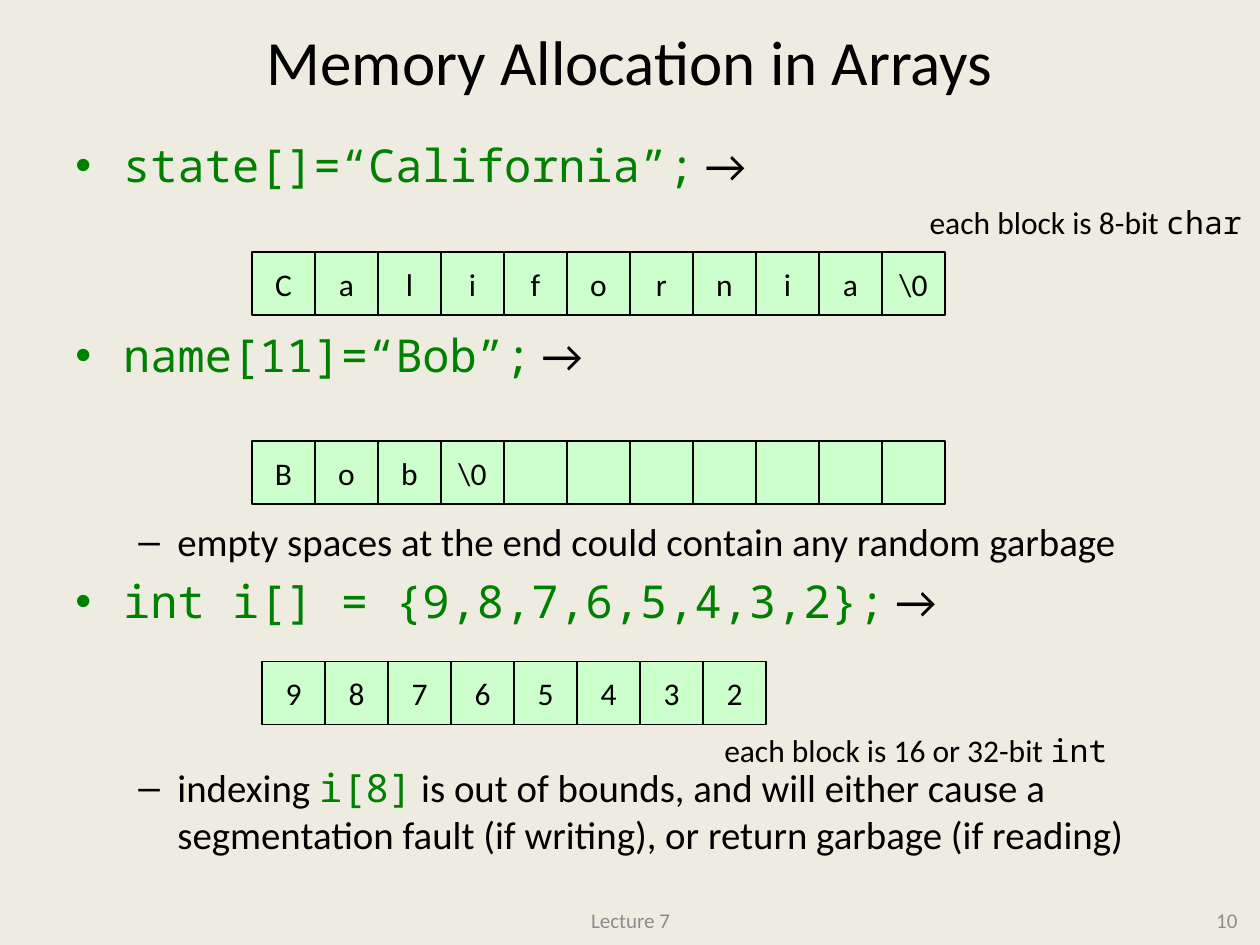
import dataclasses

import pptx
import pptx.dml.color
import pptx.enum.shapes
import pptx.enum.text
import pptx.oxml
import pptx.oxml.ns
import pptx.util

Inches = pptx.util.Inches
Pt = pptx.util.Pt
Align = pptx.enum.text.PP_ALIGN
Anchor = pptx.enum.text.MSO_ANCHOR


@dataclasses.dataclass(frozen=True)
class Theme:
    paper: str = "EEECE1"
    ink: str = "000000"
    muted: str = "8C8C8C"
    code: str = "008000"
    block: str = "CCFFCC"
    text_font: str = "Calibri"
    code_font: str = "Noto Sans Mono"
    title: float = 36
    bullet: float = 25.9
    sub_bullet: float = 22.2
    label: float = 18
    footer: float = 12


def rgb(value):
    return pptx.dml.color.RGBColor.from_string(value)


class Deck:
    """Holds the theme and the current slide."""

    def __init__(self, theme):
        self.theme = theme
        self.prs = pptx.Presentation()
        self.prs.slide_width, self.prs.slide_height = Inches(10), Inches(7.5)
        self.s = self.prs.slides.add_slide(self.prs.slide_layouts[6])
        fill = self.s.background.fill
        fill.solid()
        fill.fore_color.rgb = rgb(theme.paper)

    def run(self, p, text, size, color=None, font=None):
        r = p.add_run()
        r.text = text
        style = {"size": Pt(size), "name": font or self.theme.text_font}
        for name, value in style.items():
            setattr(r.font, name, value)
        r.font.color.rgb = rgb(color or self.theme.ink)

    def box(self, left, top, width, height, **frame):
        sp = self.s.shapes.add_textbox(*map(Inches, (left, top, width, height)))
        for name, value in {"word_wrap": True, **frame}.items():
            setattr(sp.text_frame, name, value)
        return sp.text_frame

    def line(self, at, text, size, align, color=None):
        p = self.box(*at, vertical_anchor=Anchor.MIDDLE).paragraphs[0]
        p.alignment = align
        self.run(p, text, size, color)

    def label(self, at, text, code):
        p = self.box(*at, word_wrap=False).paragraphs[0]
        self.run(p, text, self.theme.label)
        self.run(p, code, self.theme.label, font=self.theme.code_font)

    def bullets(self, at, items):
        """Each item is (level, space before, [(text, is code), ...])."""
        t = self.theme
        levels = [("•", 0.38, 0.38, t.bullet), ("–", 0.81, 0.31, t.sub_bullet)]
        tf = self.box(*at)
        for i, (level, space, runs) in enumerate(items):
            mark, margin, hang, size = levels[level]
            p = tf.add_paragraph() if i else tf.paragraphs[0]
            p.level = level
            p.space_before = Pt(space)
            pPr = p._p.get_or_add_pPr()
            pPr.set("marL", str(Inches(margin)))
            pPr.set("indent", str(-Inches(hang)))
            for tag, key, value in (("buFont", "typeface", "Arial"), ("buChar", "char", mark)):
                bu = pptx.oxml.parse_xml(f"<a:{tag} {pptx.oxml.ns.nsdecls('a')}/>")
                bu.set(key, value)
                pPr.append(bu)
            for text, is_code in runs:
                style = (t.code, t.code_font) if is_code else ()
                self.run(p, text, size, *style)

    def memory(self, left, top, values, side=0.5):
        """Draws a row of adjoining memory blocks as one group."""
        group = self.s.shapes.add_group_shape()
        for i, value in enumerate(values):
            sp = group.shapes.add_shape(
                pptx.enum.shapes.MSO_SHAPE.RECTANGLE,
                *map(Inches, (left + i * side, top, side, side)))
            sp.shadow.inherit = False
            sp.fill.solid()
            sp.fill.fore_color.rgb = rgb(self.theme.block)
            sp.line.color.rgb = rgb(self.theme.ink)
            sp.line.width = Pt(0.75)
            tf = sp.text_frame
            for name, v in {"word_wrap": False, "vertical_anchor": Anchor.MIDDLE}.items():
                setattr(tf, name, v)
            p = tf.paragraphs[0]
            p.alignment = Align.CENTER
            if value:
                self.run(p, value, self.theme.label)


def main():
    t = Theme()
    deck = Deck(t)
    deck.line((3.42, 7.1, 3.17, 0.4), "Lecture 7", t.footer, Align.CENTER, t.muted)
    deck.line((7.59, 7.1, 2.33, 0.4), "10", t.footer, Align.RIGHT, t.muted)
    deck.line((0.5, 0.08, 9, 0.8), "Memory Allocation in Arrays", t.title, Align.CENTER)

    tight, row_gap = 5.5, 77.5  # row_gap leaves room for a row of blocks
    arrow = (" →", False)
    deck.bullets((0.5, 1.04, 9, 6.05), [
        (0, 0, [("state[]=“California”;", True), arrow]),
        (0, row_gap, [("name[11]=“Bob”;", True), arrow]),
        (1, row_gap, [("empty spaces at the end could contain any random garbage", False)]),
        (0, tight, [("int i[] = {9,8,7,6,5,4,3,2};", True), arrow]),
        (1, row_gap, [
            ("indexing ", False), ("i[8]", True),
            (" is out of bounds, and will either cause a segmentation fault "
             "(if writing), or return garbage (if reading)", False)]),
    ])

    end = "\\0"
    deck.memory(2, 2, [*"California", end])
    deck.memory(2, 3.5, [*"Bob", end] + [""] * 7)
    deck.memory(2.08, 5.25, "98765432")
    deck.label((7.28, 1.56, 2.7, 0.4), "each block is 8-bit ", "char")
    deck.label((5.65, 5.75, 3.27, 0.4), "each block is 16 or 32-bit ", "int")
    deck.prs.save("out.pptx")


if __name__ == "__main__":
    main()
